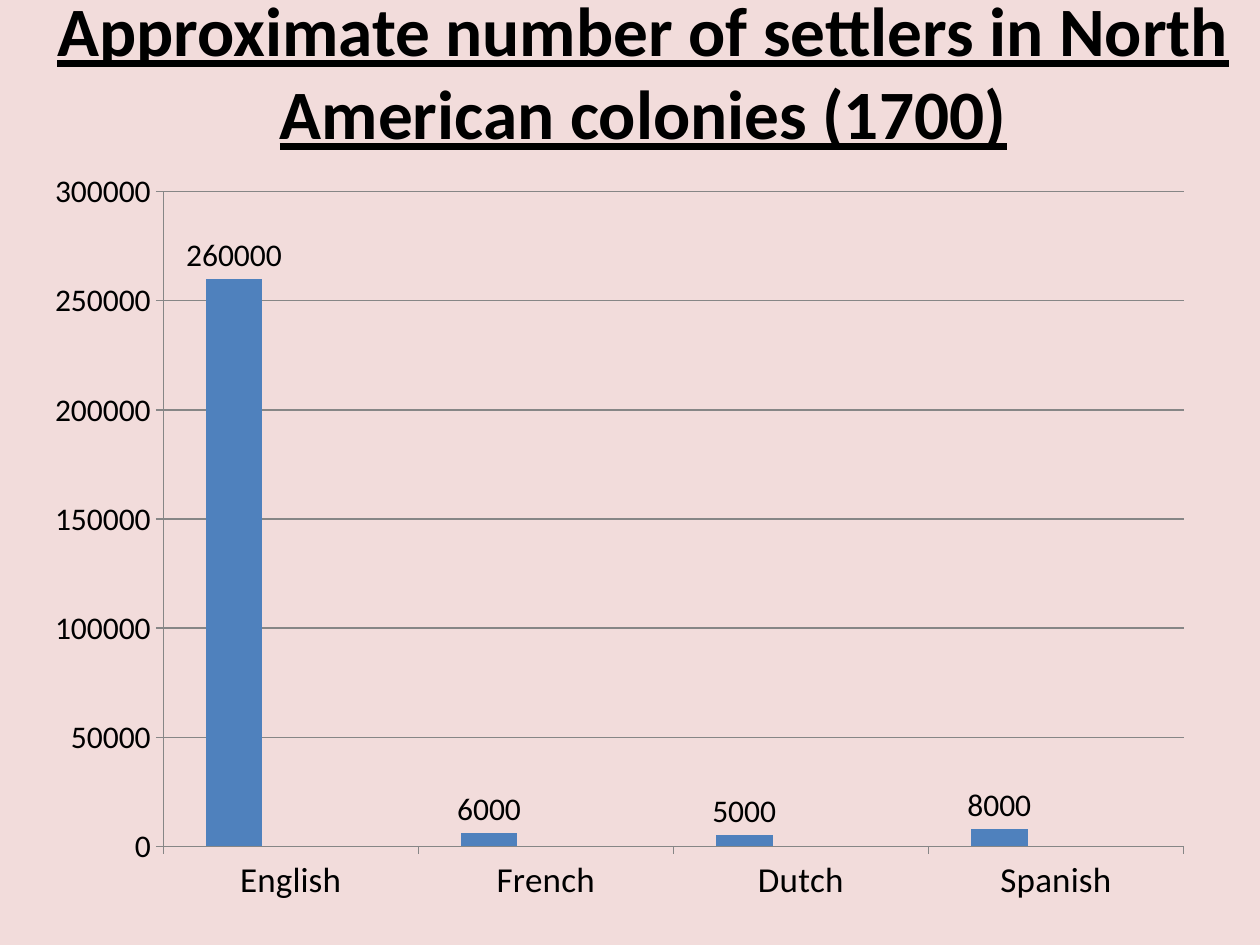
from dataclasses import dataclass

import pptx
import pptx.chart.data
import pptx.dml.color
import pptx.enum.chart
import pptx.enum.text
import pptx.util

Inches = pptx.util.Inches
Pt = pptx.util.Pt

FONT = "Calibri"
COLORS = {
    "back": "F2DCDB",
    "text": "000000",
    "grid": "868686",
    "blue": "4F81BD",
    "red": "C0504D",
    "green": "9BBB59",
}
GROUPS = ["English", "French", "Dutch", "Spanish"]


@dataclass
class Series:
    name: str
    color: str
    values: list[int | None]
    labels: bool = False


EMPTY = [None] * len(GROUPS)
SERIES = [
    Series("Series 1", "blue", [260000, 6000, 5000, 8000], True),
    Series("Series 2", "red", EMPTY),
    Series("Series 3", "green", EMPTY),
]


def color(name: str) -> pptx.dml.color.RGBColor:
    return pptx.dml.color.RGBColor.from_string(COLORS[name])


def set_font(font, size: float) -> None:
    font.name = FONT
    font.size = Pt(size)
    font.color.rgb = color("text")


def set_line(line) -> None:
    line.color.rgb = color("grid")
    line.width = Pt(0.75)


def add_title(slide, text: str) -> None:
    box = slide.shapes.add_textbox(
        Inches(0.23), Inches(0.17), Inches(9.75), Inches(0.78))
    frame = box.text_frame
    frame.text = text
    frame.word_wrap = True
    frame.vertical_anchor = pptx.enum.text.MSO_ANCHOR.MIDDLE
    line = frame.paragraphs[0]
    line.alignment = pptx.enum.text.PP_ALIGN.CENTER
    font = line.runs[0].font
    set_font(font, 39.6)
    font.bold = True
    font.underline = True


def add_bars(slide) -> None:
    data = pptx.chart.data.CategoryChartData()
    data.categories = GROUPS
    for item in SERIES:
        data.add_series(item.name, item.values)
    chart = slide.shapes.add_chart(
        pptx.enum.chart.XL_CHART_TYPE.COLUMN_CLUSTERED,
        Inches(0.25), Inches(1.25), Inches(9.33), Inches(6.03), data).chart
    chart.has_legend = False
    chart.has_title = False
    set_font(chart.font, 18)

    # Axes
    for axis, size in ((chart.category_axis, 20), (chart.value_axis, 18)):
        axis.major_tick_mark = pptx.enum.chart.XL_TICK_MARK.OUTSIDE
        axis.minor_tick_mark = pptx.enum.chart.XL_TICK_MARK.NONE
        set_font(axis.tick_labels.font, size)
        set_line(axis.format.line)
    chart.value_axis.has_major_gridlines = True
    set_line(chart.value_axis.major_gridlines.format.line)

    # Columns and their values
    plot = chart.plots[0]
    plot.gap_width = 150
    plot.overlap = 0
    plot.vary_by_categories = False
    for bars, item in zip(plot.series, SERIES):
        bars.format.fill.solid()
        bars.format.fill.fore_color.rgb = color(item.color)
        bars.invert_if_negative = False
        if item.labels:
            labels = bars.data_labels
            labels.show_value = True
            labels.position = pptx.enum.chart.XL_LABEL_POSITION.OUTSIDE_END
            set_font(labels.font, 18)


def main() -> None:
    deck = pptx.Presentation()
    deck.slide_width = Inches(10)
    deck.slide_height = Inches(7.5)
    slide = deck.slides.add_slide(deck.slide_layouts[6])
    slide.background.fill.solid()
    slide.background.fill.fore_color.rgb = color("back")
    add_title(
        slide,
        "Approximate number of settlers in North American colonies (1700)")
    add_bars(slide)
    deck.save("out.pptx")


if __name__ == "__main__":
    main()
